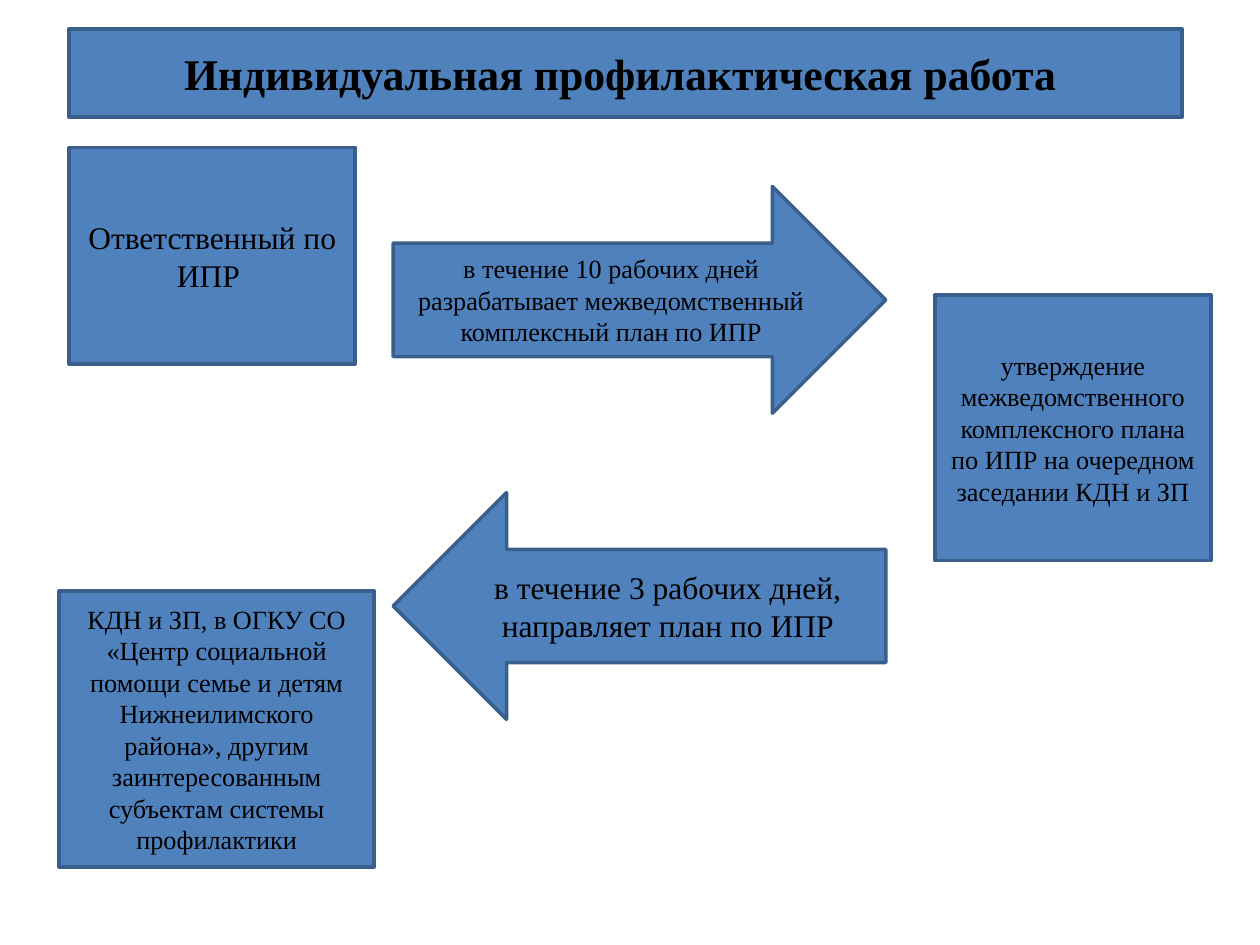
from dataclasses import dataclass

import pptx
import pptx.dml.color
import pptx.enum.shapes
import pptx.enum.text
import pptx.util

Inches = pptx.util.Inches
Kind = pptx.enum.shapes.MSO_SHAPE
COLORS = {"fill": "4F81BD", "line": "3A5F8C", "text": "000000"}
FONT = "Times New Roman"


@dataclass
class Block:
    text: str
    left: float
    top: float
    width: float
    height: float
    size: int = 15
    bold: bool = False
    kind: Kind = Kind.RECTANGLE


BLOCKS = [
    Block("Индивидуальная профилактическая работа ", 0.55, 0.23, 8.83, 0.7,
          size=25, bold=True),
    Block("Ответственный по ИПР ", 0.55, 1.17, 2.27, 1.72, size=18),
    Block("в течение 10 рабочих дней разрабатывает межведомственный "
          "комплексный план по ИПР", 3.12, 1.48, 3.91, 1.8,
          kind=Kind.RIGHT_ARROW),
    Block("утверждение межведомственного комплексного плана по ИПР "
          "на очередном заседании КДН и ЗП", 7.42, 2.34, 2.19, 2.11),
    Block("в течение 3 рабочих дней, направляет план по ИПР",
          3.12, 3.91, 3.91, 1.8, size=18, kind=Kind.LEFT_ARROW),
    Block("КДН и ЗП, в ОГКУ СО «Центр социальной помощи семье и детям "
          "Нижнеилимского района», другим заинтересованным субъектам "
          "системы профилактики", 0.47, 4.69, 2.5, 2.19),
]


def color(name: str) -> pptx.dml.color.RGBColor:
    return pptx.dml.color.RGBColor.from_string(COLORS[name])


def write(frame, text: str, *, size: int, bold: bool = False) -> None:
    frame.word_wrap = True
    frame.vertical_anchor = pptx.enum.text.MSO_ANCHOR.MIDDLE
    para = frame.paragraphs[0]
    para.alignment = pptx.enum.text.PP_ALIGN.CENTER
    run = para.add_run()
    run.text = text
    run.font.name = FONT
    run.font.size = pptx.util.Pt(size)
    run.font.bold = bold
    run.font.color.rgb = color("text")


def draw(slide, block: Block) -> None:
    shape = slide.shapes.add_shape(
        block.kind, Inches(block.left), Inches(block.top),
        Inches(block.width), Inches(block.height))
    shape.shadow.inherit = False
    shape.fill.solid()
    shape.fill.fore_color.rgb = color("fill")
    shape.line.color.rgb = color("line")
    shape.line.width = pptx.util.Pt(2)
    write(shape.text_frame, block.text, size=block.size, bold=block.bold)


def main() -> None:
    deck = pptx.Presentation()
    deck.slide_width = Inches(10)
    deck.slide_height = Inches(7.5)
    slide = deck.slides.add_slide(deck.slide_layouts[6])
    for block in BLOCKS:
        draw(slide, block)
    deck.save("out.pptx")


if __name__ == "__main__":
    main()
